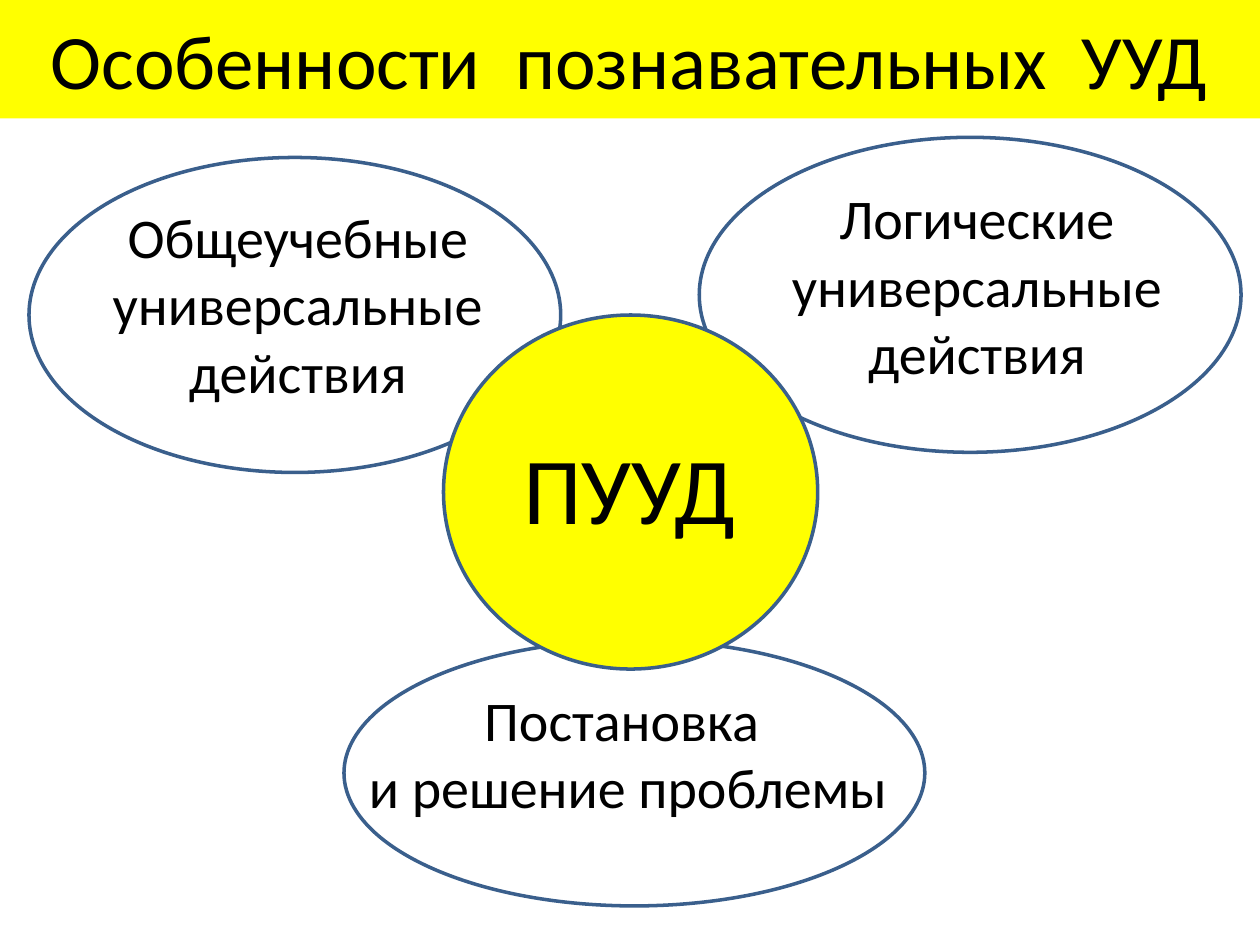
from pptx import Presentation
from pptx.dml.color import RGBColor
from pptx.enum.shapes import MSO_SHAPE as Shape
from pptx.enum.text import MSO_ANCHOR as Anchor, MSO_AUTO_SIZE as AutoSize, PP_ALIGN as Align
from pptx.util import Inches, Pt

COLORS = {"accent": "FFFF00", "outline": "3A5F8C", "text": "000000"}


def color(name):
    """Return the named palette colour."""
    return RGBColor.from_string(COLORS[name])


def write_lines(frame, lines, size):
    """Write centred lines, one paragraph each."""
    for index, line in enumerate(lines):
        para = frame.add_paragraph() if index else frame.paragraphs[0]
        para.alignment = Align.CENTER
        span = para.add_run()
        span.text = line
        span.font.name = "Calibri"
        span.font.size = Pt(size)
        span.font.color.rgb = color("text")


def add_figure(page, preset, box, fill=None, outline=None):
    """Add a flat shape in the given box."""
    figure = page.shapes.add_shape(preset, *map(Inches, box))
    figure.shadow.inherit = False
    if fill:
        figure.fill.solid()
        figure.fill.fore_color.rgb = color(fill)
    else:
        figure.fill.background()
    if outline:
        figure.line.color.rgb = color(outline)
        figure.line.width = Pt(2)
    else:
        figure.line.fill.background()
    return figure


def add_title(page, box, title):
    """Add the title band."""
    frame = add_figure(page, Shape.RECTANGLE, box, fill="accent").text_frame
    frame.word_wrap = True
    frame.vertical_anchor = Anchor.MIDDLE
    write_lines(frame, [title], 44)


def add_bubble(page, box, label_box, lines, size=32, fill=None, wrap=False):
    """Add an ellipse with a label placed relative to its corner."""
    left, top, _, _ = box
    inset_x, inset_y, width, height = label_box
    add_figure(page, Shape.OVAL, box, fill, "outline")
    label = page.shapes.add_textbox(
        Inches(left + inset_x), Inches(top + inset_y), Inches(width), Inches(height))
    frame = label.text_frame
    frame.word_wrap = wrap
    frame.auto_size = AutoSize.SHAPE_TO_FIT_TEXT
    write_lines(frame, lines, size)


def main():
    """Build and save the slide."""
    deck = Presentation()
    deck.slide_width, deck.slide_height = Inches(10), Inches(7.5)
    page = deck.slides.add_slide(deck.slide_layouts[6])
    add_title(page, (0, 0, 10, 0.94), "Особенности  познавательных  УУД")
    add_bubble(page, (0.23, 1.25, 4.22, 2.5), (0.55, 0.31, 3.17, 1.72),
               ["Общеучебные", "универсальные", "действия"])
    add_bubble(page, (2.73, 5.08, 4.61, 2.11), (0.08, 0.31, 4.35, 1.18),
               ["Постановка ", "и решение проблемы"])
    add_bubble(page, (5.55, 1.09, 4.3, 2.5), (0.62, 0.32, 3.17, 1.72),
               ["Логические", "универсальные", "действия"])
    add_bubble(page, (3.52, 2.5, 2.97, 2.81), (0.07, 0.86, 2.81, 1.01),
               ["ПУУД"], size=54, fill="accent", wrap=True)
    deck.save("out.pptx")


if __name__ == "__main__":
    main()
